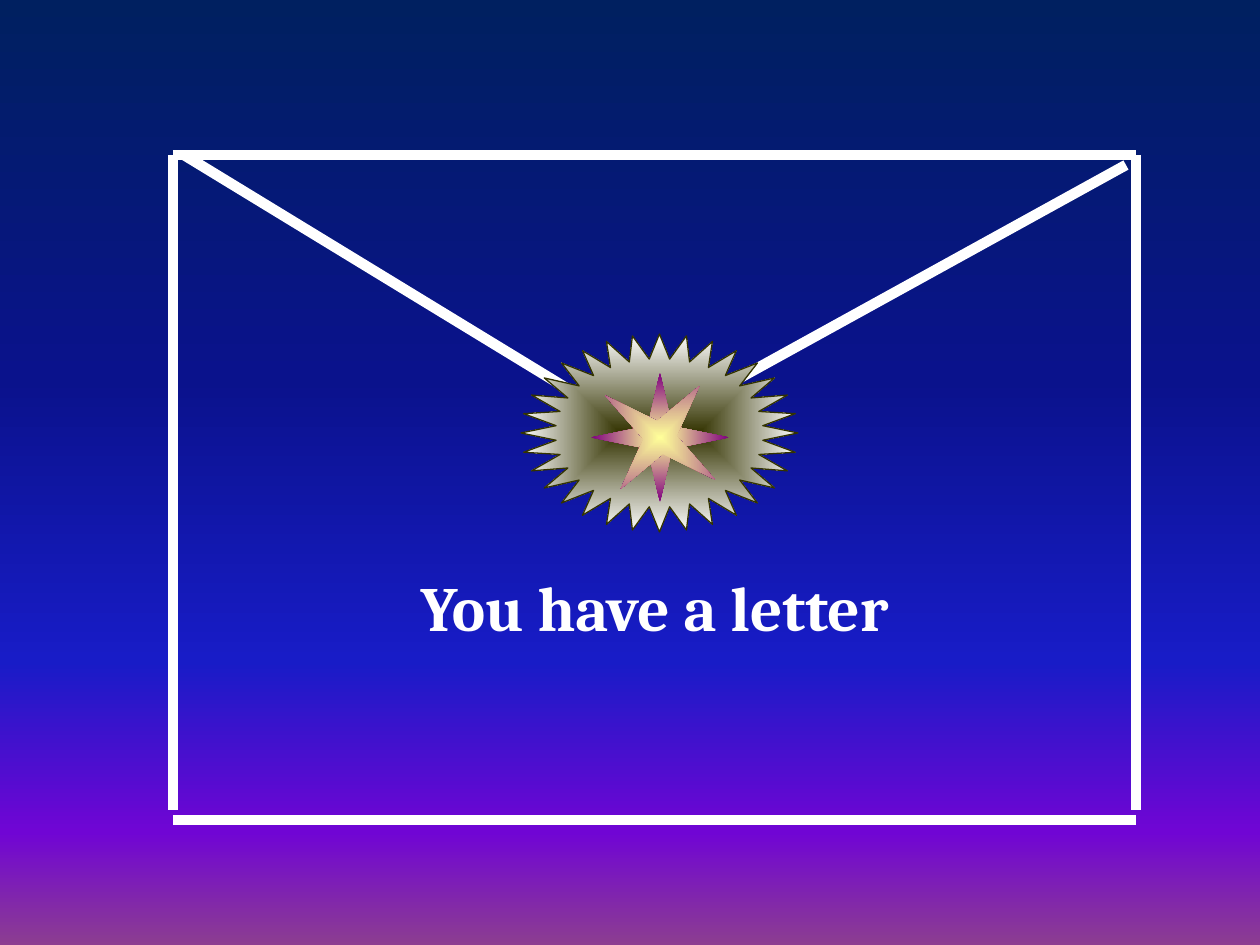
import dataclasses

import lxml.etree
import pptx
import pptx.dml.color
import pptx.enum.shapes
import pptx.enum.text
import pptx.oxml.ns
import pptx.util

SCALE = 914400 / 126
KIND = pptx.enum.shapes.MSO_SHAPE
QN = pptx.oxml.ns.qn


@dataclasses.dataclass(frozen=True)
class Theme:
    """Colours, font and sizes of the slide."""
    sky: tuple = ((0, "002060"), (40, "0A128C"), (70, "181CC7"),
                  (88, "7005D4"), (100, "8C3D91"))
    seal: tuple = ((0, "333300"), (100, "FFFFFF"))
    star: tuple = ((0, "FFFF99"), (100, "800080"))
    edge: str = "333300"
    ink: str = "FFFFFF"
    font: str = "Cambria"
    size: int = 36
    thick: float = 6
    thin: float = 0.75


THEME = Theme()


def px(num):
    """Turn pixels into EMU."""
    return pptx.util.Emu(round(num * SCALE))


def rgb(code):
    """Turn a hex code into a colour."""
    return pptx.dml.color.RGBColor.from_string(code)


def add_grad(fill, owner, stops, radial):
    """Fill with colour stops, either from the centre or downwards."""
    fill.gradient()
    grad = next(owner.iter(QN("a:gradFill")))
    for child in list(grad):
        grad.remove(child)
    sub = lxml.etree.SubElement
    items = sub(grad, QN("a:gsLst"))
    for place, code in stops:
        stop = sub(items, QN("a:gs"), pos=str(place * 1000))
        sub(stop, QN("a:srgbClr"), val=code)
    if radial:
        route = sub(grad, QN("a:path"), path="shape")
        sub(route, QN("a:fillToRect"), dict.fromkeys("ltrb", "50000"))
    else:
        sub(grad, QN("a:lin"), ang="5400000", scaled="0")


def add_line(slide, start, end):
    """Draw one thick fold or edge."""
    line = slide.shapes.add_connector(
        pptx.enum.shapes.MSO_CONNECTOR.STRAIGHT, *map(px, start + end))
    line.line.color.rgb = rgb(THEME.ink)
    line.line.width = pptx.util.Pt(THEME.thick)
    lxml.etree.SubElement(line.element.spPr, QN("a:effectLst"))


def add_star(shapes, kind, box, depth, stops, turn=0, edge=None):
    """Draw a star with a radial fill."""
    star = shapes.add_shape(kind, *map(px, box))
    star.adjustments[0] = depth
    star.rotation = turn
    star.shadow.inherit = False
    add_grad(star.fill, star.element, stops, True)
    if edge:
        star.line.color.rgb = rgb(edge)
        star.line.width = pptx.util.Pt(THEME.thin)
    else:
        star.line.fill.background()


def set_title(slide, text, box):
    """Place and format the title."""
    title = slide.shapes.title
    title.left, title.top, title.width, title.height = map(px, box)
    frame = title.text_frame
    frame.text = text
    frame.word_wrap = False
    frame.auto_size = pptx.enum.text.MSO_AUTO_SIZE.NONE
    frame.vertical_anchor = pptx.enum.text.MSO_ANCHOR.MIDDLE
    para = frame.paragraphs[0]
    para.alignment = pptx.enum.text.PP_ALIGN.CENTER
    font = para.runs[0].font
    font.name = THEME.font
    font.size = pptx.util.Pt(THEME.size)
    font.bold = True
    font.color.rgb = rgb(THEME.ink)


def main():
    """Build the envelope slide."""
    deck = pptx.Presentation()
    deck.slide_width, deck.slide_height = px(1260), px(945)
    slide = deck.slides.add_slide(deck.slide_layouts[5])
    add_grad(slide.background.fill, slide.element, THEME.sky, False)

    left, right, top, base = 173, 1136, 155, 820
    tip = (640, 433)
    for side in (left, right):
        add_line(slide, (side, top), (side, base - 10))
    for level in (top, base):
        add_line(slide, (left, level), (right, level))
    add_line(slide, (left + 11, top), tip)
    add_line(slide, tip, (right - 10, top + 10))

    set_title(slide, "You have a letter", (213, 562, 883, 89))

    add_star(slide.shapes, KIND.STAR_32_POINT, (521, 334, 277, 198),
             0.375, THEME.seal, edge=THEME.edge)
    group = slide.shapes.add_group_shape()
    for turn in (0, 37.4):
        add_star(group.shapes, KIND.STAR_4_POINT, (591, 373, 138, 129),
                 0.125, THEME.star, turn)
    deck.save("out.pptx")


if __name__ == "__main__":
    main()
